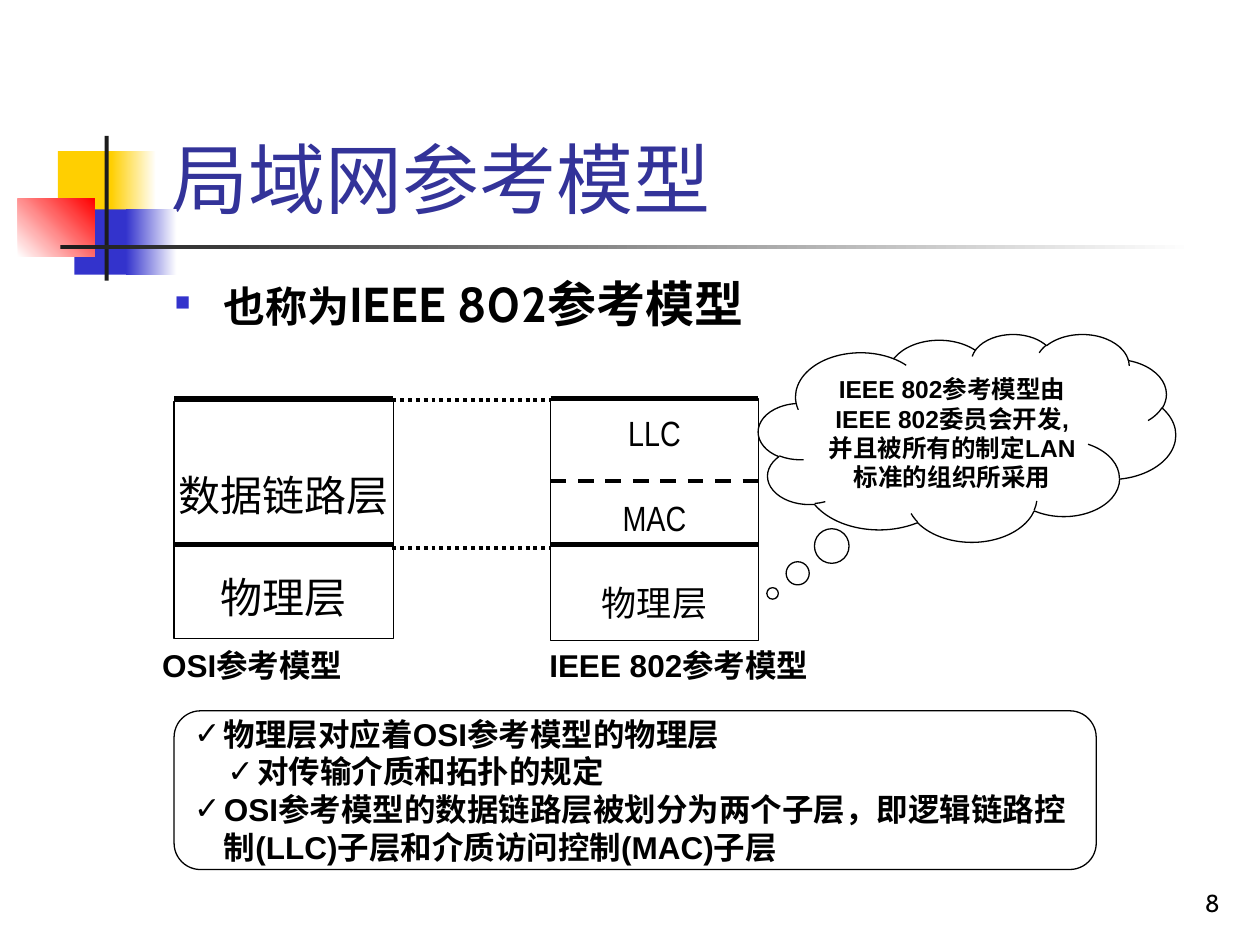
from lxml.etree import SubElement
from pptx import Presentation
from pptx.dml.color import RGBColor
from pptx.enum.dml import MSO_LINE
from pptx.enum.shapes import MSO_CONNECTOR, MSO_SHAPE
from pptx.enum.text import MSO_ANCHOR, PP_ALIGN
from pptx.oxml.ns import qn
from pptx.util import Cm, Pt

YELLOW, BLUE, RED = "FFCF01", "3333CC", "FF0000"
BLACK, WHITE, DARK, TITLE = "000000", "FFFFFF", "1C1C1C", "333399"


def rgb(color):
    return RGBColor.from_string(color)


def add_text(p, text, font="Arial", size=18, color=BLACK, bold=False, align=None, before=0):
    r = p.add_run()
    r.text = text
    r.font.name, r.font.size, r.font.bold = font, Pt(size), bold
    r.font.color.rgb = rgb(color)
    p.alignment = align
    p.space_before = Pt(before)


def set_bullet(p, char, margin, hang, color=BLACK, scale=100):
    pPr = p._p.get_or_add_pPr()
    pPr.set("marL", str(Cm(margin)))
    pPr.set("indent", str(-Cm(hang)))
    clr = SubElement(pPr, qn("a:buClr"))
    SubElement(clr, qn("a:srgbClr"), val=color)
    SubElement(pPr, qn("a:buSzPct"), val=str(scale * 1000))
    SubElement(pPr, qn("a:buFont"), typeface="Arial")
    SubElement(pPr, qn("a:buChar"), char=char)


def next_paragraph(tf, index):
    return tf.add_paragraph() if index else tf.paragraphs[0]


def add_box(s, kind, box, fill=None, line=None):
    sp = s.shapes.add_shape(kind, *map(Cm, box))
    sp.shadow.inherit = False
    if fill:
        sp.fill.solid()
        sp.fill.fore_color.rgb = rgb(fill)
    else:
        sp.fill.background()
    if line:
        sp.line.color.rgb = rgb(line)
        sp.line.width = Pt(0.75)
    else:
        sp.line.fill.background()
    sp.text_frame.vertical_anchor = MSO_ANCHOR.MIDDLE
    return sp


def add_textbox(s, box):
    tf = s.shapes.add_textbox(*map(Cm, box)).text_frame
    tf.word_wrap = True
    return tf


def add_rule(s, x1, x2, y, width=3, dash=None):
    """Draw a horizontal line from x1 to x2."""
    c = s.shapes.add_connector(MSO_CONNECTOR.STRAIGHT, Cm(x1), Cm(y), Cm(x2), Cm(y))
    c.line.color.rgb = rgb(BLACK)
    c.line.width = Pt(width)
    if dash:
        c.line.dash_style = dash
    SubElement(c._element.spPr, qn("a:effectLst"))


def add_ornament(s, x, y):
    """Coloured blocks and crossing bars; a second colour makes a gradient."""
    parts = [
        (0.81, 0.31, 1.22, 1.32, YELLOW, None, 0),
        (1.88, 0.31, 0.91, 1.32, YELLOW, WHITE, 0),
        (1.14, 1.48, 1.17, 1.32, BLUE, None, 0),
        (2.18, 1.48, 1.02, 1.32, BLUE, WHITE, 0),
        (0, 1.27, 1.55, 1.17, WHITE, RED, 45),
        (1.75, 0, 0.08, 2.92, DARK, None, 0),
        (0.86, 2.2, 22.86, 0.09, DARK, WHITE, 0),
    ]
    for dx, dy, w, h, start, end, angle in parts:
        sp = add_box(s, MSO_SHAPE.RECTANGLE, (x + dx, y + dy, w, h), start)
        if end:
            sp.fill.gradient()
            sp.fill.gradient_angle = angle
            for stop, color in zip(sp.fill.gradient_stops, (start, end)):
                stop.color.rgb = rgb(color)


def add_title(s, box, text):
    sp = s.shapes.title
    sp.left, sp.top, sp.width, sp.height = map(Cm, box)
    sp.text_frame.vertical_anchor = MSO_ANCHOR.BOTTOM
    add_text(sp.text_frame.paragraphs[0], text, font="Cabin", size=44,
             color=TITLE, align=PP_ALIGN.LEFT)


def add_subtitle(s, box):
    p = add_textbox(s, box).paragraphs[0]
    add_text(p, "也称为", font="Cabin", size=24, bold=True)
    add_text(p, "IEEE 802参考模型", font="Cabin", size=28, bold=True)
    p.line_spacing = 0.8
    set_bullet(p, "■", 0.97, 0.97, BLUE, 60)


def add_stack(s, box, layers, size, rules):
    """Frame with layer names as (text, space before) and rules as (offset, width, dash)."""
    x, y, w, h = box
    tf = add_box(s, MSO_SHAPE.RECTANGLE, box, line=BLACK).text_frame
    tf.word_wrap = False
    tf.vertical_anchor = MSO_ANCHOR.BOTTOM
    tf.margin_bottom = Cm(0.35)
    for i, (text, before) in enumerate(layers):
        add_text(next_paragraph(tf, i), text, font="Arial Narrow", size=size,
                 align=PP_ALIGN.CENTER, before=before)
    for dy, width, dash in rules:
        add_rule(s, x, x + w, y + dy, width, dash)


def add_models(s, x, y):
    """The two layer models, side by side, with links and captions."""
    gap_left, gap_right = x + 4.4, x + 7.59
    add_stack(s, (x, y + 0.07, 4.42, 4.78), [("数据链路层", 0), ("物理层", 29)], 24,
              [(-0.07, 3, None), (2.87, 3, None)])
    add_stack(s, (gap_right, y, 4.19, 4.88), [("LLC", 0), ("MAC", 25), ("物理层", 24)], 20,
              [(0, 3, None), (1.67, 2.25, MSO_LINE.DASH), (2.94, 3, None)])
    for dy in (0.03, 3.02):
        add_rule(s, gap_left, gap_right, y + dy, 2.25, MSO_LINE.ROUND_DOT)
    for dx, w, text in ((-1.22, 5.59, "OSI参考模型"), (7.18, 5.99, "IEEE 802参考模型")):
        tf = add_textbox(s, (x + dx, y + 4.87, w, 1.02))
        add_text(tf.paragraphs[0], text, bold=True, align=PP_ALIGN.CENTER)


def add_cloud(s, box, text):
    sp = add_box(s, MSO_SHAPE.CLOUD_CALLOUT, box, WHITE, BLACK)
    sp.adjustments[0], sp.adjustments[1] = -0.466, 0.749
    sp.text_frame.word_wrap = True
    add_text(sp.text_frame.paragraphs[0], text, size=14, bold=True, align=PP_ALIGN.CENTER)


def add_notes_panel(s, box):
    tf = add_box(s, MSO_SHAPE.ROUNDED_RECTANGLE, box, WHITE, BLACK).text_frame
    tf.word_wrap = True
    points = [
        (0, "物理层对应着OSI参考模型的物理层"),
        (1, "对传输介质和拓扑的规定"),
        (0, "OSI参考模型的数据链路层被划分为两个子层，即逻辑链路控制(LLC)子层和介质访问控制(MAC)子层"),
    ]
    for i, (level, text) in enumerate(points):
        p = next_paragraph(tf, i)
        p.level = level
        add_text(p, text, bold=True, align=PP_ALIGN.LEFT)
        set_bullet(p, "✓", 0.6 + 0.67 * level, 0.6)


def add_page_number(s, box, number):
    tf = add_textbox(s, box)
    tf.vertical_anchor = MSO_ANCHOR.BOTTOM
    add_text(tf.paragraphs[0], number, font="Cabin", size=14, align=PP_ALIGN.RIGHT)


def main():
    prs = Presentation()
    prs.slide_width, prs.slide_height = Cm(25.4), Cm(19.05)
    s = prs.slides.add_slide(prs.slide_layouts[5])
    add_ornament(s, 0.36, 2.74)
    add_page_number(s, (19.56, 17.35, 5.28, 1.27), "8")
    add_title(s, (3.2, 0.58, 21.64, 4.06), "局域网参考模型")
    add_subtitle(s, (3.28, 5.61, 21.59, 1.32))
    add_notes_panel(s, (3.51, 14.33, 18.59, 3.2))
    add_models(s, 3.51, 8.03)
    add_cloud(s, (15.29, 6.73, 8.41, 4.19),
              "IEEE 802参考模型由IEEE 802委员会开发,并且被所有的制定LAN标准的组织所采用")
    prs.save("out.pptx")


if __name__ == "__main__":
    main()
